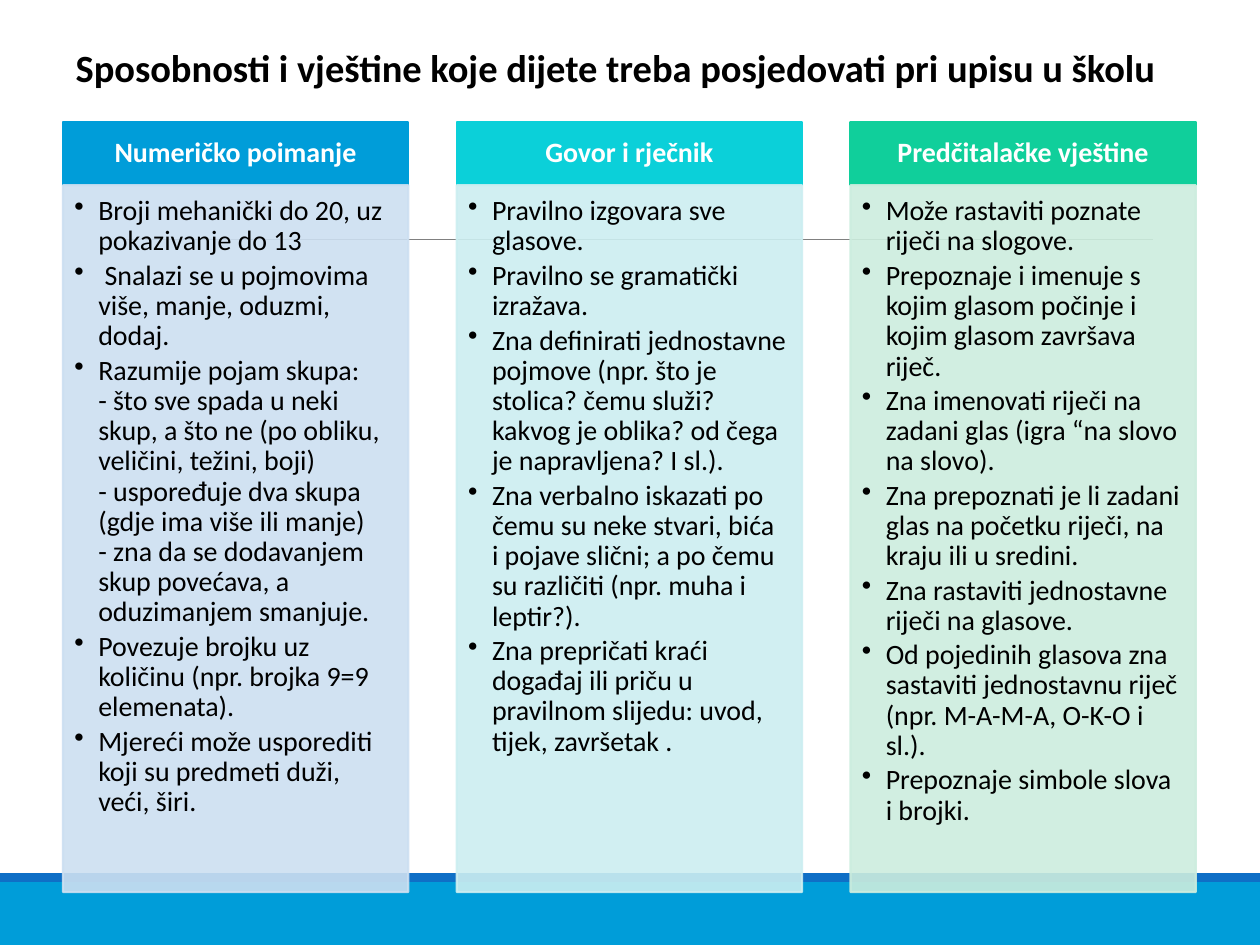
from dataclasses import dataclass

from lxml.etree import SubElement
from pptx import Presentation
from pptx.dml.color import RGBColor
from pptx.enum.shapes import MSO_CONNECTOR, MSO_SHAPE
from pptx.enum.text import MSO_ANCHOR as Anchor, MSO_AUTO_SIZE, PP_ALIGN as Align
from pptx.oxml.ns import qn
from pptx.util import Inches, Pt

FONT = "Calibri"
BLACK = RGBColor(0x00, 0x00, 0x00)
WHITE = RGBColor(0xFF, 0xFF, 0xFF)
GRAY = RGBColor(0x80, 0x80, 0x80)
BLUE = RGBColor(0x00, 0x9D, 0xD9)
DARK_BLUE = RGBColor(0x0F, 0x6F, 0xC6)
CYAN = RGBColor(0x0B, 0xD0, 0xD9)
GREEN = RGBColor(0x10, 0xCF, 0x9B)
PALE_BLUE = RGBColor(0xCC, 0xDF, 0xF1)
PALE_CYAN = RGBColor(0xCC, 0xEE, 0xF1)
PALE_GREEN = RGBColor(0xCC, 0xED, 0xDE)

LEFT, STEP, WIDTH = 0.5, 3.125, 2.74
HEAD_TOP, HEAD_HEIGHT, LIST_HEIGHT = 0.97, 0.5, 5.61


@dataclass
class Column:
    heading: str
    color: RGBColor
    pale: RGBColor
    items: list[str]


COLUMNS = [
    Column("Numeričko poimanje", BLUE, PALE_BLUE, [
        "Broji mehanički do 20, uz pokazivanje do 13",
        " Snalazi se u pojmovima više, manje, oduzmi, dodaj.",
        "Razumije pojam skupa: \n"
        "- što sve spada u neki skup, a što ne (po obliku, veličini, težini, boji)\n"
        "- uspoređuje dva skupa (gdje ima više ili manje)\n"
        "- zna da se dodavanjem skup povećava, a oduzimanjem smanjuje.",
        "Povezuje brojku uz količinu (npr. brojka 9=9 elemenata).",
        "Mjereći može usporediti koji su predmeti duži, veći, širi.",
    ]),
    Column("Govor i rječnik", CYAN, PALE_CYAN, [
        "Pravilno izgovara sve glasove.",
        "Pravilno se gramatički izražava.",
        "Zna definirati jednostavne pojmove (npr. što je stolica? čemu služi? "
        "kakvog je oblika? od čega je napravljena? I sl.).",
        "Zna verbalno iskazati po čemu su neke stvari, bića i pojave slični; "
        "a po čemu su različiti (npr. muha i leptir?).",
        "Zna prepričati kraći događaj ili priču u pravilnom slijedu: "
        "uvod, tijek, završetak .",
    ]),
    Column("Predčitalačke vještine", GREEN, PALE_GREEN, [
        "Može rastaviti poznate riječi na slogove.",
        "Prepoznaje i imenuje s kojim glasom počinje i kojim glasom završava riječ.",
        "Zna imenovati riječi na zadani glas (igra “na slovo na slovo).",
        "Zna prepoznati je li zadani glas na početku riječi, na kraju ili u sredini.",
        "Zna rastaviti jednostavne riječi na glasove.",
        "Od pojedinih glasova zna sastaviti jednostavnu riječ "
        "(npr. M-A-M-A, O-K-O i sl.).",
        "Prepoznaje simbole slova i brojki.",
    ]),
]


def add_box(page, left: float, top: float, width: float, height: float,
            color: RGBColor, outlined: bool = False):
    box = page.shapes.add_shape(MSO_SHAPE.RECTANGLE, Inches(left), Inches(top),
                                Inches(width), Inches(height))
    box.shadow.inherit = False
    box.fill.solid()
    box.fill.fore_color.rgb = color
    if outlined:
        box.line.color.rgb = color
        box.line.width = Pt(1.25)
    else:
        box.line.fill.background()
    return box


def set_frame(box, anchor: Anchor, insets: tuple[float, float, float, float]):
    """Insets run left, top, right, bottom."""
    frame = box.text_frame
    frame.word_wrap = True
    frame.vertical_anchor = anchor
    (frame.margin_left, frame.margin_top,
     frame.margin_right, frame.margin_bottom) = map(Inches, insets)
    return frame


def set_font(para, size: float, color: RGBColor, bold: bool = False) -> None:
    para.font.name = FONT
    para.font.size = Pt(size)
    para.font.bold = bold
    para.font.color.rgb = color


def make_translucent(box, percent: int) -> None:
    """Give the fill and the line the same opacity."""
    for color in box._element.spPr.iter(qn("a:srgbClr")):
        SubElement(color, qn("a:alpha"), val=str(percent * 1000))


def add_bullet(para) -> None:
    properties = para._p.get_or_add_pPr()
    properties.set("marL", str(Inches(0.19)))
    properties.set("indent", str(-Inches(0.19)))
    SubElement(properties, qn("a:buChar"), char="•")


def add_column(page, column: Column, left: float) -> None:
    head = add_box(page, left, HEAD_TOP, WIDTH, HEAD_HEIGHT, column.color, True)
    para = set_frame(head, Anchor.MIDDLE, (0.12, 0.07, 0.12, 0.07)).paragraphs[0]
    para.text = column.heading
    para.alignment = Align.CENTER
    para.line_spacing = 0.9
    set_font(para, 16, WHITE, bold=True)

    panel = add_box(page, left, HEAD_TOP + HEAD_HEIGHT, WIDTH, LIST_HEIGHT,
                    column.pale, True)
    make_translucent(panel, 90)
    frame = set_frame(panel, Anchor.TOP, (0.09, 0.09, 0.12, 0.14))
    for index, item in enumerate(column.items):
        para = frame.add_paragraph() if index else frame.paragraphs[0]
        para.text = item
        add_bullet(para)
        para.alignment = Align.LEFT
        para.line_spacing = 0.9
        para.space_after = Pt(2.4)
        set_font(para, 16, BLACK)


def add_rule(page) -> None:
    rule = page.shapes.add_connector(MSO_CONNECTOR.STRAIGHT, Inches(0.98),
                                     Inches(1.9), Inches(9.15), Inches(1.9))
    rule.line.color.rgb = GRAY
    rule.line.width = Pt(0.5)
    SubElement(rule._element.spPr, qn("a:effectLst"))


def add_title(page, text: str) -> None:
    title = page.shapes.title
    title.left, title.top = Inches(0.5), Inches(0.3)
    title.width, title.height = Inches(9), Inches(0.78)
    frame = set_frame(title, Anchor.TOP, (0.1, 0.05, 0.1, 0.05))
    frame.auto_size = MSO_AUTO_SIZE.NONE
    para = frame.paragraphs[0]
    para.text = text
    para.alignment = Align.LEFT
    set_font(para, 22, BLACK, bold=True)


def main() -> None:
    deck = Presentation()
    deck.slide_width, deck.slide_height = Inches(10), Inches(7.5)
    page = deck.slides.add_slide(deck.slide_layouts[5])
    add_box(page, 0, 7, 10, 0.5, BLUE)
    add_box(page, 0, 6.93, 10, 0.07, DARK_BLUE)
    add_rule(page)
    for index, column in enumerate(COLUMNS):
        add_column(page, column, LEFT + index * STEP)
    add_title(page, "Sposobnosti i vještine koje dijete treba posjedovati "
                    "pri upisu u školu")
    deck.save("out.pptx")


if __name__ == "__main__":
    main()
